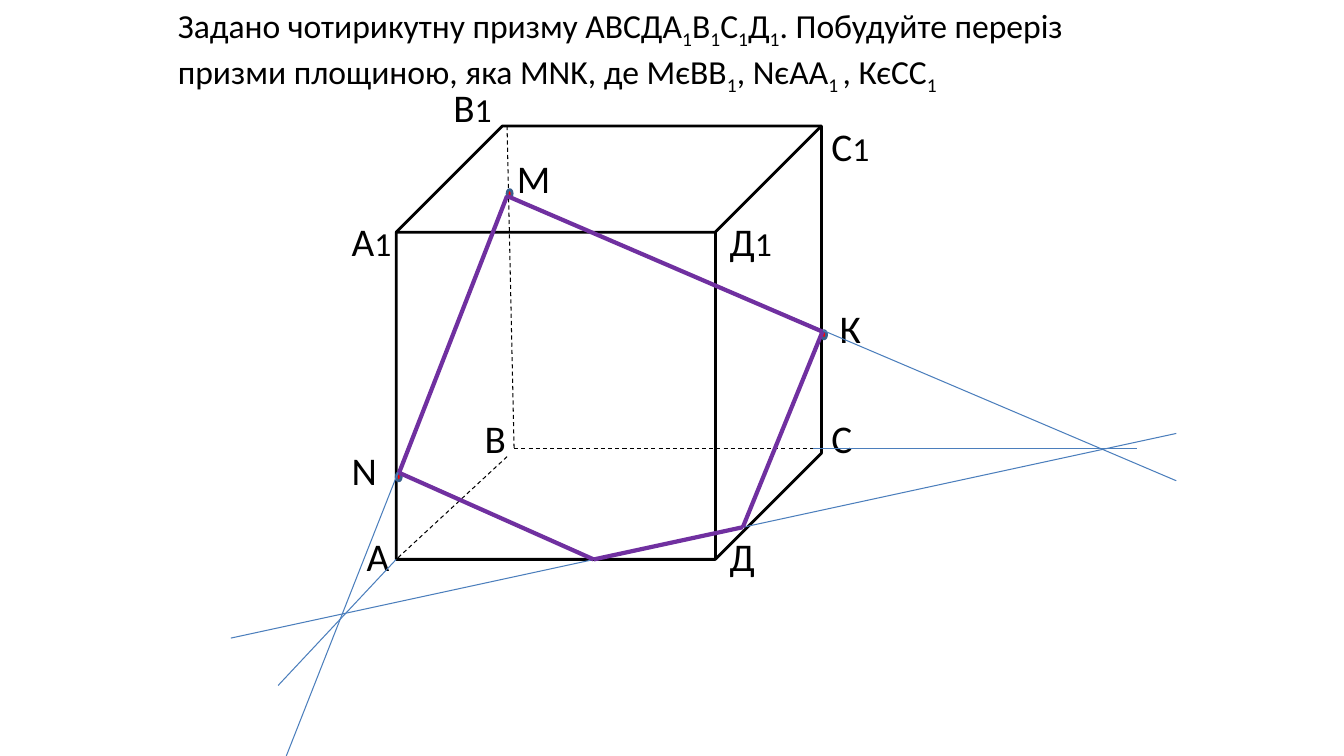
from itertools import pairwise

from lxml import etree
from pptx import Presentation
from pptx.dml.color import RGBColor
from pptx.enum.dml import MSO_LINE
from pptx.enum.shapes import MSO_CONNECTOR, MSO_SHAPE
from pptx.enum.text import MSO_AUTO_SIZE
from pptx.oxml.ns import qn
from pptx.util import Pt

CUBE, OVAL = MSO_SHAPE.CUBE, MSO_SHAPE.OVAL
STRAIGHT, DASH = MSO_CONNECTOR.STRAIGHT, MSO_LINE.DASH
FIT = MSO_AUTO_SIZE.SHAPE_TO_FIT_TEXT
FONT = "Calibri"
COLORS = {name: RGBColor.from_string(value) for name, value in {
    "black": "000000", "trace": "4B7EBC", "section": "7030A0",
    "dot": "FF0000", "dot_edge": "3A5F8C"}.items()}

prs = Presentation()
prs.slide_width, prs.slide_height = Pt(960), Pt(540)
s = prs.slides.add_slide(prs.slide_layouts[6])


def add_line(start, end, color, width, dash=None):
    ln = s.shapes.add_connector(STRAIGHT, *map(Pt, start + end))
    ln.line.color.rgb = COLORS[color]
    ln.line.width = Pt(width)
    if dash:
        ln.line.dash_style = dash
    etree.SubElement(ln._element.spPr, qn("a:effectLst"))


def add_text(x, y, w, h, runs):
    """Each run is (text, size, is_subscript)."""
    tf = s.shapes.add_textbox(Pt(x), Pt(y), Pt(w), Pt(h)).text_frame
    tf.word_wrap = True
    tf.auto_size = FIT
    for text, size, subscript in runs:
        r = tf.paragraphs[0].add_run()
        r.text = text
        r.font.name = FONT
        r.font.size = Pt(size)
        r.font.color.rgb = COLORS["black"]
        if subscript:
            r.font._element.set("baseline", "-25000")


# Prism with its hidden edges
sp = s.shapes.add_shape(CUBE, Pt(283), Pt(90), Pt(303.8), Pt(309.6))
sp.shadow.inherit = False
sp.fill.background()
sp.line.color.rgb = COLORS["black"]
sp.line.width = Pt(2)

A, B, C = (283, 399.6), (367.2, 320.4), (581, 320.4)
for start, end in [((362.2, 90), B), (B, C), ((362.2, 326.2), A)]:
    add_line(start, end, "black", 0.75, DASH)

# Problem statement: every second part is a subscript
statement = ["Задано чотирикутну призму АВСДА", "1", "В", "1", "С", "1", "Д", "1",
             ". Побудуйте переріз призми площиною, яка MNK, де МєВВ", "1",
             ", NєАА", "1 ", ", КєСС", "1"]
add_text(120, 0, 720, 65.5,
         [(text, 24, i % 2 == 1) for i, text in enumerate(statement)])

# Vertex and point labels
labels = [("А", 254.9, 376.6), ("В", 339.1, 292.3), ("С", 586.8, 292.3),
          ("Д", 514.1, 376.6), ("А1", 244.1, 151.9), ("В1", 316.8, 56.2),
          ("С1", 586.8, 84.2), ("Д1", 514.1, 151.9), ("М", 362.2, 106.6),
          ("N", 244.1, 315.4), ("К", 592.6, 213.8)]
for label, x, y in labels:
    runs = [(label[0], 28, False)]
    if len(label) > 1:
        runs.append((label[1], 24, False))
    add_text(x, y, 44.6 if len(label) > 1 else 33.8, 41, runs)

# Given points M, N, K
for x, y in [(362.2, 135.4), (283, 337.7), (586.8, 236.2)]:
    sp = s.shapes.add_shape(OVAL, Pt(x), Pt(y), Pt(3.6), Pt(5.8))
    sp.shadow.inherit = False
    sp.fill.solid()
    sp.fill.fore_color.rgb = COLORS["dot"]
    sp.line.color.rgb = COLORS["dot_edge"]
    sp.line.width = Pt(2)

# Construction lines
M, K, N = (362.2, 140), (587.5, 236.9), (285.1, 337.7)
for start, end in [(M, (204.5, 540)), (M, (840.2, 343.4)), (A, (198.7, 489.6)),
                   (C, (812.2, 320.4)), ((164.9, 455.8), (840.2, 309.6))]:
    add_line(start, end, "trace", 0.75)

# Section polygon
on_CD, on_AD = (530.6, 376.6), (424.1, 399.6)
for start, end in pairwise([M, N, on_AD, on_CD, K, M]):
    add_line(start, end, "section", 3)

prs.save("out.pptx")
